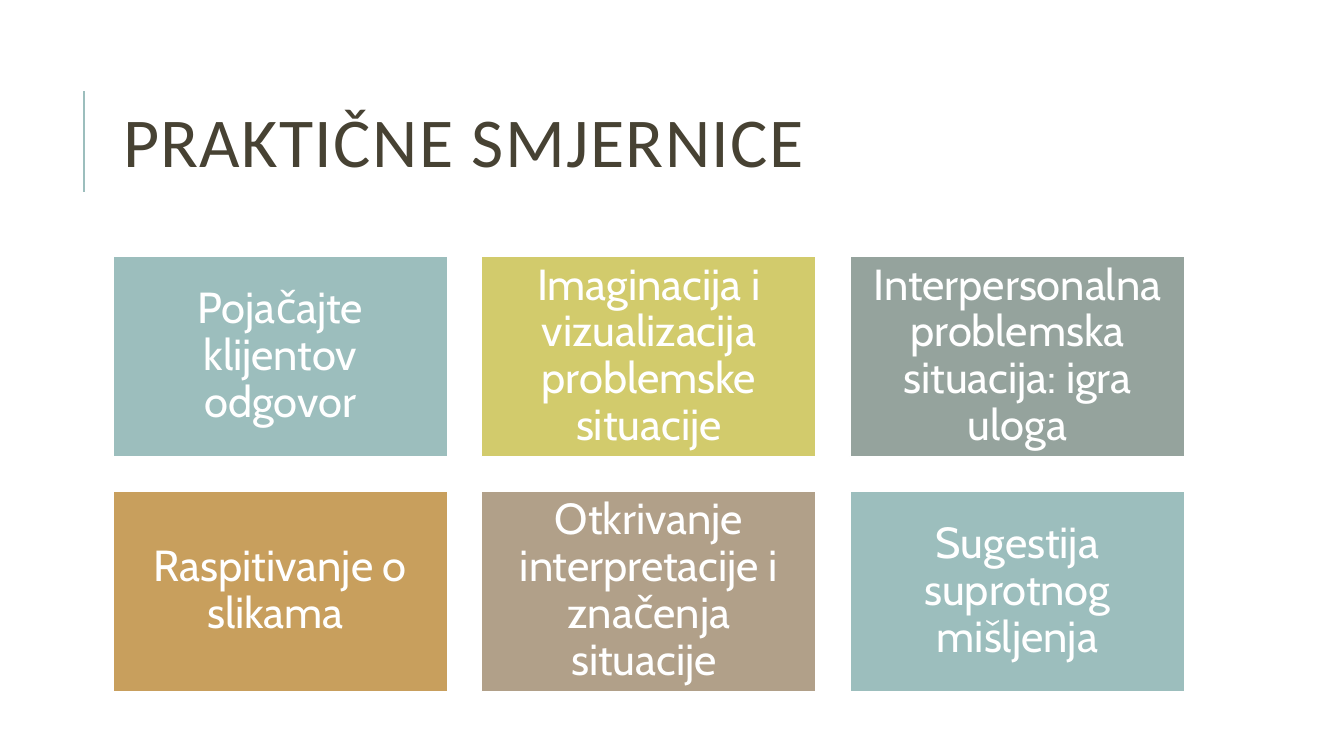
"""Builds the slide of practical guidelines: a title, a rule and a grid of six cards."""
from dataclasses import dataclass

from lxml.etree import SubElement
from pptx import Presentation
from pptx.dml.color import RGBColor
from pptx.enum.shapes import MSO_CONNECTOR as CONN, MSO_SHAPE as SHAPE
from pptx.enum.text import MSO_ANCHOR as ANCHOR, MSO_AUTO_SIZE as FIT, PP_ALIGN as ALIGN
from pptx.oxml.ns import qn
from pptx.util import Inches, Pt

LEFT, TOP = 1.12, 2.54
CARD_W, CARD_H = 3.32, 1.99
GAP_X, GAP_Y = 0.335, 0.34
COLUMNS = 3


@dataclass
class Card:
    text: str
    fill: str


CARDS = [
    Card("Pojačajte klijentov odgovor", "9CBEBD"),
    Card("Imaginacija i vizualizacija problemske situacije", "D2CB6C"),
    Card("Interpersonalna problemska situacija: igra uloga", "95A39D"),
    Card("Raspitivanje o slikama ", "C89F5D"),
    Card("Otkrivanje interpretacije i značenja situacije ", "B1A089"),
    Card("Sugestija suprotnog mišljenja", "9CBEBD"),
]
INSET = Inches(0.13)
FRAME = dict(word_wrap=True, auto_size=FIT.NONE, vertical_anchor=ANCHOR.MIDDLE)
CARD_FRAME = FRAME | dict(margin_left=INSET, margin_right=INSET,
                          margin_top=INSET, margin_bottom=INSET)
CARD_PARAGRAPH = dict(alignment=ALIGN.CENTER, line_spacing=0.9)
CARD_FONT = dict(name="Cabin", size=Pt(31))
TITLE_PARAGRAPH = dict(alignment=ALIGN.LEFT, line_spacing=0.8)
TITLE_FONT = dict(name="Calibri", size=Pt(50))


def rgb(value: str) -> RGBColor:
    return RGBColor.from_string(value)


def apply(target, values: dict) -> None:
    for name, value in values.items():
        setattr(target, name, value)


def write(s, text: str, color: str, frame: dict, paragraph: dict, font: dict):
    tf = s.text_frame
    apply(tf, frame)
    p = tf.paragraphs[0]
    apply(p, paragraph)
    r = p.add_run()
    r.text = text
    apply(r.font, font)
    r.font.color.rgb = rgb(color)
    return r


def add_title(slide, text: str) -> None:
    s = slide.shapes.title
    apply(s, dict(left=Inches(LEFT), top=Inches(0.64),
                  width=Inches(10.63), height=Inches(1.64)))
    r = write(s, text, "474233", FRAME, TITLE_PARAGRAPH, TITLE_FONT)
    r.font._element.set("spc", "100")


def add_rule(slide) -> None:
    x = Inches(0.83)
    s = slide.shapes.add_connector(CONN.STRAIGHT, x, Inches(1.9), x, Inches(0.9))
    s.line.color.rgb = rgb("9CBEBD")
    s.line.width = Pt(1.5)
    SubElement(s._element.spPr, qn("a:effectLst"))


def add_card(slide, card: Card, index: int) -> None:
    row, column = divmod(index, COLUMNS)
    s = slide.shapes.add_shape(
        SHAPE.RECTANGLE,
        Inches(LEFT + column * (CARD_W + GAP_X)), Inches(TOP + row * (CARD_H + GAP_Y)),
        Inches(CARD_W), Inches(CARD_H))
    s.shadow.inherit = False
    s.fill.solid()
    s.fill.fore_color.rgb = rgb(card.fill)
    s.line.color.rgb = rgb("FFFFFF")
    s.line.width = Pt(1.25)
    write(s, card.text, "FFFFFF", CARD_FRAME, CARD_PARAGRAPH, CARD_FONT)


def main() -> None:
    prs = Presentation()
    prs.slide_width, prs.slide_height = Inches(13.33), Inches(7.5)
    slide = prs.slides.add_slide(prs.slide_layouts[5])
    add_rule(slide)
    add_title(slide, "PRAKTIČNE SMJERNICE")
    for index, card in enumerate(CARDS):
        add_card(slide, card, index)
    prs.save("out.pptx")


if __name__ == "__main__":
    main()
